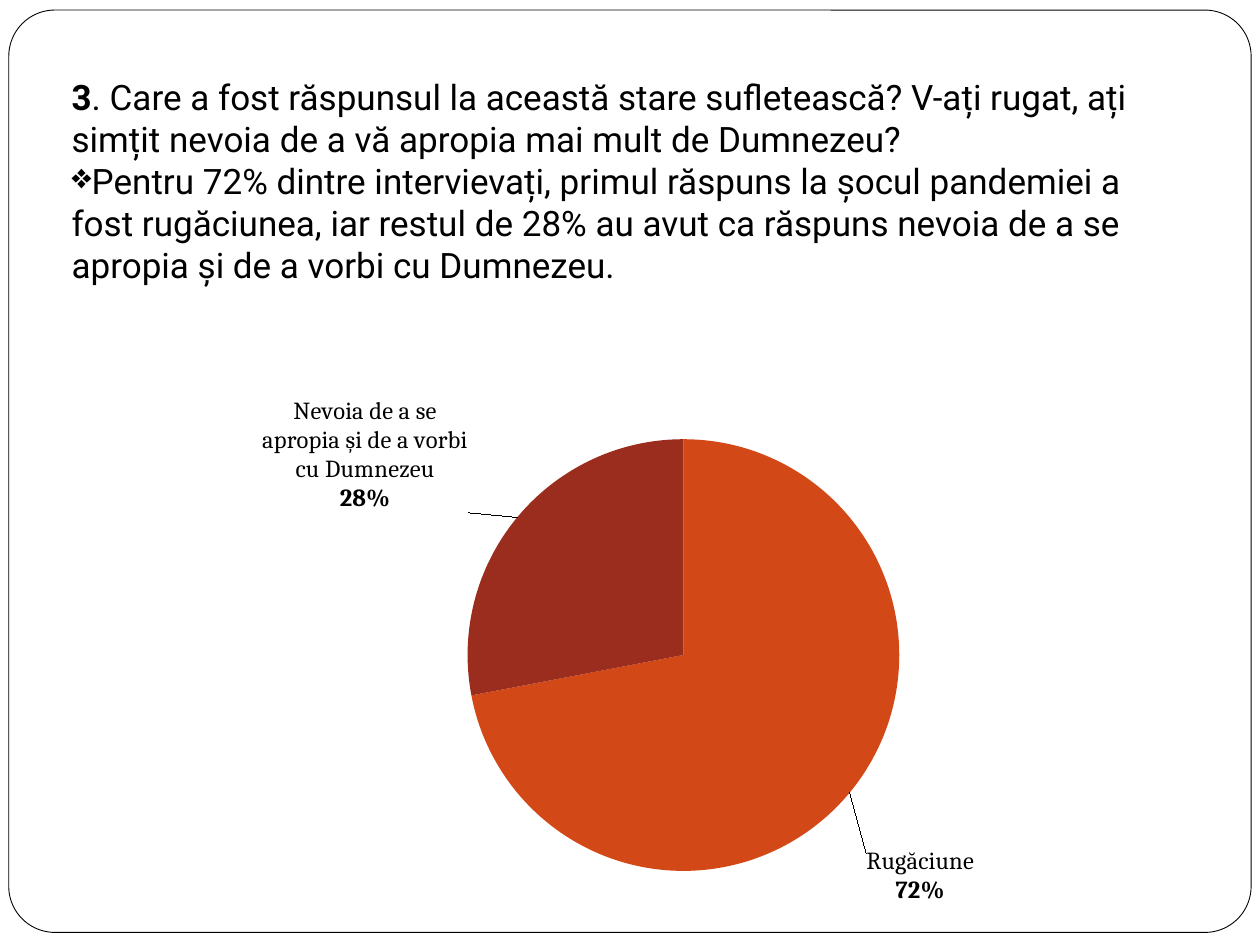
"""Build a survey slide with a question, its finding and a pie chart of the answers."""
from lxml import etree
from pptx import Presentation
from pptx.chart.data import CategoryChartData
from pptx.dml.color import RGBColor
from pptx.enum.chart import XL_CHART_TYPE as CT, XL_LABEL_POSITION as LP
from pptx.enum.shapes import MSO_SHAPE as SHP
from pptx.oxml import parse_xml
from pptx.oxml.ns import nsdecls, qn
from pptx.util import Inches, Pt

COLORS = {"text": "000000", "back": "FFFFFF", "prayer": "D34817", "need": "9B2D1F"}


def rgb(name):
    return RGBColor.from_string(COLORS[name])


def manual_layout(x, y, w=None, h=None):
    values = {"x": x, "y": y}
    if w:
        values = {"layoutTarget": "inner", "xMode": "edge", "yMode": "edge", **values, "w": w, "h": h}
    items = "".join(f'<c:{tag} val="{val}"/>' for tag, val in values.items())
    return parse_xml(f'<c:layout {nsdecls("c")}><c:manualLayout>{items}</c:manualLayout></c:layout>')


prs = Presentation()
prs.slide_width, prs.slide_height = Inches(10), Inches(7.5)
s = prs.slides.add_slide(prs.slide_layouts[6])

frame = s.shapes.add_shape(SHP.ROUNDED_RECTANGLE, Inches(0.07), Inches(0.08), Inches(9.86), Inches(7.32))
frame.adjustments[0] = 0.05
frame.shadow.inherit = False
frame.fill.solid()
frame.fill.fore_color.rgb = rgb("back")
frame.line.color.rgb = rgb("text")
frame.line.width = Pt(0.5)

tf = s.shapes.add_textbox(Inches(0.47), Inches(0.55), Inches(9.06), Inches(2.39)).text_frame
tf.word_wrap = True
question, finding = tf.paragraphs[0], tf.add_paragraph()
r = question.add_run()
r.text = "3"
r.font.bold = True
question.add_run().text = (
    ". Care a fost răspunsul la această stare sufletească? V-ați rugat, ați simțit "
    "nevoia de a vă apropia mai mult de Dumnezeu?")
finding.add_run().text = (
    "Pentru 72% dintre intervievați, primul răspuns la șocul pandemiei a fost rugăciunea, "
    "iar restul de 28% au avut ca răspuns nevoia de a se apropia și de a vorbi cu Dumnezeu.")
for p in tf.paragraphs:
    p.font.name = "Roboto"
    p.font.size = Pt(20)
    p.font.color.rgb = rgb("text")
pPr = finding._p.get_or_add_pPr()
bullet = etree.Element(qn("a:buChar"), char="❖")
pPr.insert(0, bullet)

data = CategoryChartData()
data.categories = ["Rugăciune", "Nevoia de a se apropia și de a vorbi de Dumnezeu"]
data.add_series("Series 1", (72, 28))
chart = s.shapes.add_chart(CT.PIE, Inches(0.7), Inches(2.73), Inches(8.59), Inches(4.45), data).chart
chart.has_legend = False
chart.has_title = False
chart.font.name = "Times New Roman"
chart.font.size = Pt(10)
chart.font.color.rgb = rgb("text")
plot_area = chart._chartSpace.chart.plotArea
for old in plot_area.findall(qn("c:layout")):
    plot_area.remove(old)
plot_area.insert(0, manual_layout(0.35, 0.17, 0.4, 0.77))

plot = chart.plots[0]
plot.vary_by_categories = True
slices = [
    ("prayer", "Rugăciune", "72%", 0.01, 0.1),
    ("need", "Nevoia de a se apropia și de a vorbi cu Dumnezeu", "28%", -0.04, 0),
]
for i, (color, answer, share, dx, dy) in enumerate(slices):
    point = plot.series[0].points[i]
    point.format.fill.solid()
    point.format.fill.fore_color.rgb = rgb(color)
    label = point.data_label
    label_tf = label.text_frame
    label_tf.text = f"{answer}\n{share}"
    for p, bold in zip(label_tf.paragraphs, (False, True)):
        font = p.runs[0].font
        font.name = "Cambria"
        font.size = Pt(14)
        font.bold = bold
        font.color.rgb = rgb("text")
    label.position = LP.OUTSIDE_END
    dLbl = plot.series[0]._element.findall(".//" + qn("c:dLbl"))[i]
    dLbl.insert(1, manual_layout(dx, dy))

prs.save("out.pptx")
